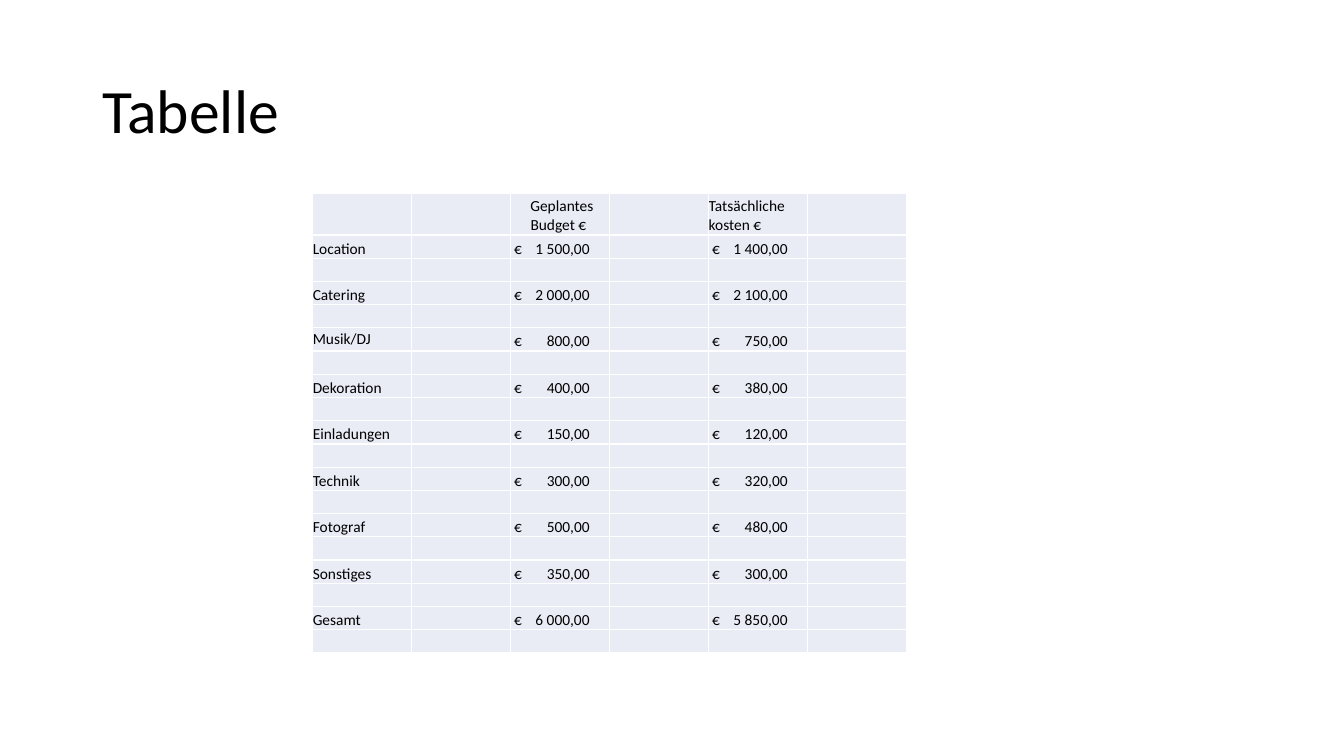
from lxml.etree import SubElement
from pptx import Presentation
from pptx.dml.color import RGBColor
from pptx.enum.text import MSO_ANCHOR, PP_ALIGN
from pptx.oxml.ns import qn
from pptx.util import Pt

FONT = "Calibri"
BLACK, WHITE, PALE = "000000", "FFFFFF", "E9EBF5"
HEADS = {2: " Geplantes Budget € ", 4: "Tatsächliche kosten €"}
COSTS = [
    ("Location", "1 500,00", "1 400,00"),
    ("Catering", "2 000,00", "2 100,00"),
    ("Musik/DJ", "800,00", "750,00"),
    ("Dekoration", "400,00", "380,00"),
    ("Einladungen", "150,00", "120,00"),
    ("Technik", "300,00", "320,00"),
    ("Fotograf", "500,00", "480,00"),
    ("Sonstiges", "350,00", "300,00"),
    ("Gesamt", "6 000,00", "5 850,00"),
]


def color(code):
    return RGBColor.from_string(code)


def add_run(para, text, size):
    run = para.add_run()
    run.text = text
    run.font.name = FONT
    run.font.size = Pt(size)
    run.font.color.rgb = color(BLACK)


def add_title(slide, left, top, width, height):
    box = slide.shapes.add_textbox(Pt(left), Pt(top), Pt(width), Pt(height))
    frame = box.text_frame
    frame.word_wrap = True
    frame.vertical_anchor = MSO_ANCHOR.MIDDLE
    para = frame.paragraphs[0]
    para.line_spacing = 0.9
    add_run(para, "Tabelle", 44)


def style_cell(cell):
    cell.margin_left = cell.margin_right = 0
    cell.margin_top = cell.margin_bottom = 0
    cell.vertical_anchor = MSO_ANCHOR.BOTTOM
    # Borders come before the fill in the cell properties
    props = cell._tc.get_or_add_tcPr()
    for side in ("a:lnL", "a:lnR", "a:lnT", "a:lnB"):
        line = SubElement(props, qn(side), w=str(Pt(1)))
        fill = SubElement(line, qn("a:solidFill"))
        SubElement(fill, qn("a:srgbClr"), val=WHITE)
    cell.fill.solid()
    cell.fill.fore_color.rgb = color(PALE)
    # Empty cells need a small font to keep the row low
    end = cell.text_frame.paragraphs[0]._p.get_or_add_endParaRPr()
    end.set("sz", "1100")


def add_sum(cell, value):
    # Euro sign on the left, amount on a right tab stop
    cell.margin_left = Pt(2.5)
    para = cell.text_frame.paragraphs[0]
    tabs = SubElement(para._p.get_or_add_pPr(), qn("a:tabLst"))
    SubElement(tabs, qn("a:tab"), pos=str(Pt(54)), algn="r")
    add_run(para, "€\t" + value, 11)


def add_costs(slide, left, top, width, height):
    count = 1 + 2 * len(COSTS)
    frame = slide.shapes.add_table(
        count, 6, Pt(left), Pt(top), Pt(width), Pt(height))
    table = frame.table
    table.first_row = table.horz_banding = False
    for col in table.columns:
        col.width = Pt(width / 6)
    head = 29.5
    for index, row in enumerate(table.rows):
        row.height = Pt((height - head) / (count - 1) if index else head)
    for cell in table.iter_cells():
        style_cell(cell)

    # Heading row
    for col, text in HEADS.items():
        add_run(table.cell(0, col).text_frame.paragraphs[0], text, 11)
    table.cell(0, 2).text_frame.paragraphs[0].alignment = PP_ALIGN.CENTER

    # One cost on every other row
    for index, (name, plan, real) in enumerate(COSTS):
        row = 1 + 2 * index
        label = table.cell(row, 0)
        add_run(label.text_frame.paragraphs[0], name, 11)
        if name == "Musik/DJ":
            label.vertical_anchor = MSO_ANCHOR.MIDDLE
        add_sum(table.cell(row, 2), plan)
        add_sum(table.cell(row, 4), real)


def main():
    deck = Presentation()
    deck.slide_width, deck.slide_height = Pt(960), Pt(540)
    slide = deck.slides.add_slide(deck.slide_layouts[6])
    add_title(slide, 66, 28.75, 828, 104.4)
    add_costs(slide, 223.4, 138.4, 424.2, 328.4)
    deck.save("out.pptx")


if __name__ == "__main__":
    main()
